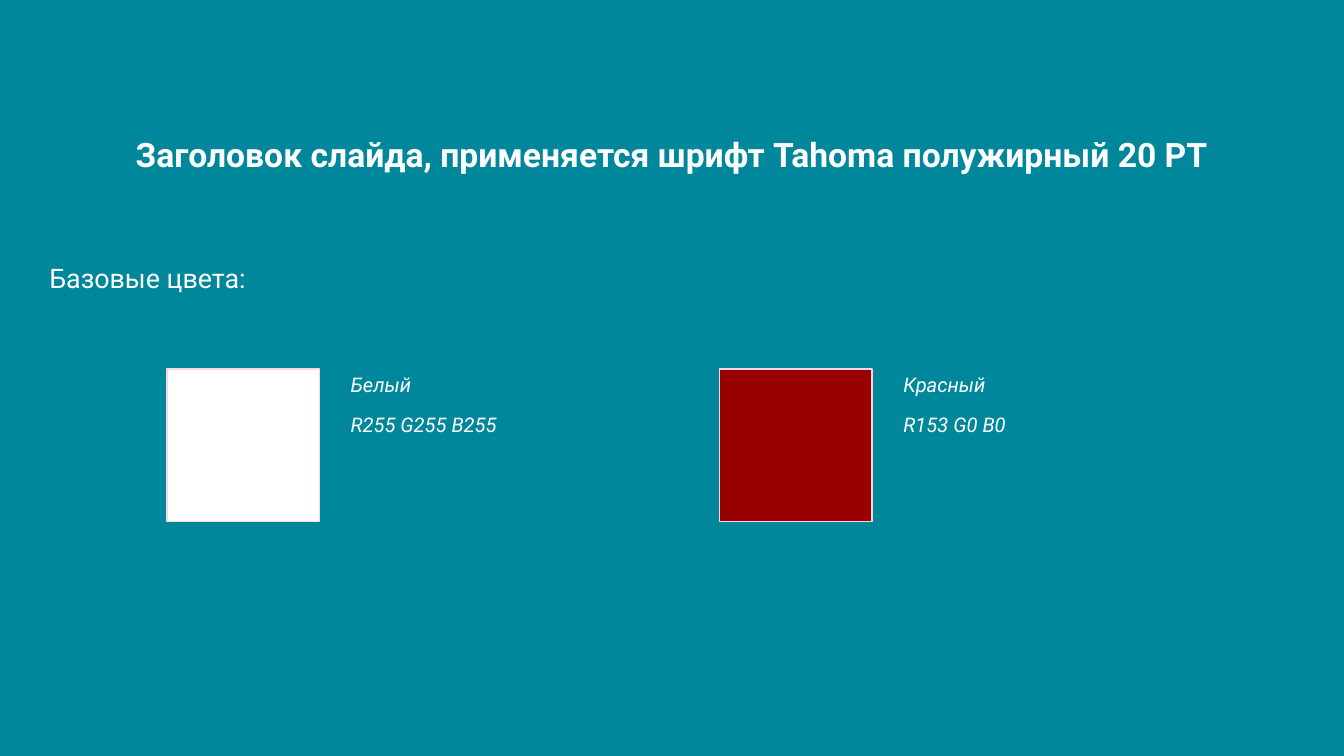
"""Build a slide that shows the base colours of a presentation style."""
from dataclasses import dataclass

from pptx import Presentation
from pptx.dml.color import RGBColor
from pptx.enum.shapes import MSO_SHAPE
from pptx.enum.text import MSO_ANCHOR, PP_ALIGN
from pptx.slide import Slide
from pptx.text.text import TextFrame
from pptx.util import Inches, Pt

COLORS = {"teal": "00879B", "white": "FFFFFF", "red": "990000", "outline": "FAD5E5"}
FONT = "Roboto"
SWATCH_TOP, SWATCH_SIDE = 3.05, 1.26
LABEL_OFFSET, LABEL_WIDTH = 1.42, 2.76


@dataclass
class Swatch:
    left: float
    color: str
    label: str


SWATCHES = [
    Swatch(1.38, "white", "Белый\nR255 G255 B255"),
    Swatch(5.95, "red", "Красный\nR153 G0 B0"),
]


def rgb(name: str) -> RGBColor:
    return RGBColor.from_string(COLORS[name])


def write(tf: TextFrame, text: str, size: float, bold: bool = False,
          italic: bool = False, align: PP_ALIGN = PP_ALIGN.LEFT) -> None:
    tf.text = text
    tf.word_wrap = True
    for i, p in enumerate(tf.paragraphs):
        p.alignment = align
        p.line_spacing = 0.9
        p.space_before = Pt(11.1 if i else 0)
        for r in p.runs:
            r.font.name, r.font.size = FONT, Pt(size)
            r.font.bold, r.font.italic = bold, italic
            r.font.color.rgb = rgb("white")


def add_title(s: Slide, text: str) -> None:
    sp = s.shapes.title
    sp.left, sp.top = Inches(0), Inches(1)
    sp.width, sp.height = Inches(11.11), Inches(0.59)
    tf = sp.text_frame
    tf.vertical_anchor = MSO_ANCHOR.MIDDLE
    tf.margin_left = tf.margin_right = tf.margin_top = tf.margin_bottom = Inches(0.05)
    write(tf, text, 20, bold=True, align=PP_ALIGN.CENTER)


def add_text(s: Slide, left: float, top: float, width: float, height: float,
             text: str, size: float, italic: bool = False) -> None:
    sp = s.shapes.add_textbox(Inches(left), Inches(top), Inches(width), Inches(height))
    write(sp.text_frame, text, size, italic=italic)


def add_swatch(s: Slide, swatch: Swatch) -> None:
    sp = s.shapes.add_shape(MSO_SHAPE.RECTANGLE, Inches(swatch.left), Inches(SWATCH_TOP),
                            Inches(SWATCH_SIDE), Inches(SWATCH_SIDE))
    sp.shadow.inherit = False
    sp.fill.solid()
    sp.fill.fore_color.rgb = rgb(swatch.color)
    sp.line.color.rgb = rgb("outline")
    sp.line.width = Pt(0.75)
    add_text(s, swatch.left + LABEL_OFFSET, SWATCH_TOP, LABEL_WIDTH, SWATCH_SIDE,
             swatch.label, 12, italic=True)


def main() -> None:
    prs = Presentation()
    prs.slide_width, prs.slide_height = Inches(11.11), Inches(6.25)
    s = prs.slides.add_slide(prs.slide_layouts.get_by_name("Title Only"))
    s.background.fill.solid()
    s.background.fill.fore_color.rgb = rgb("teal")
    add_title(s, "Заголовок слайда, применяется шрифт Tahoma полужирный 20 PT")
    add_text(s, 0.31, 2.14, 10.5, 0.49, "Базовые цвета:", 16)
    for swatch in SWATCHES:
        add_swatch(s, swatch)
    prs.save("out.pptx")


if __name__ == "__main__":
    main()
